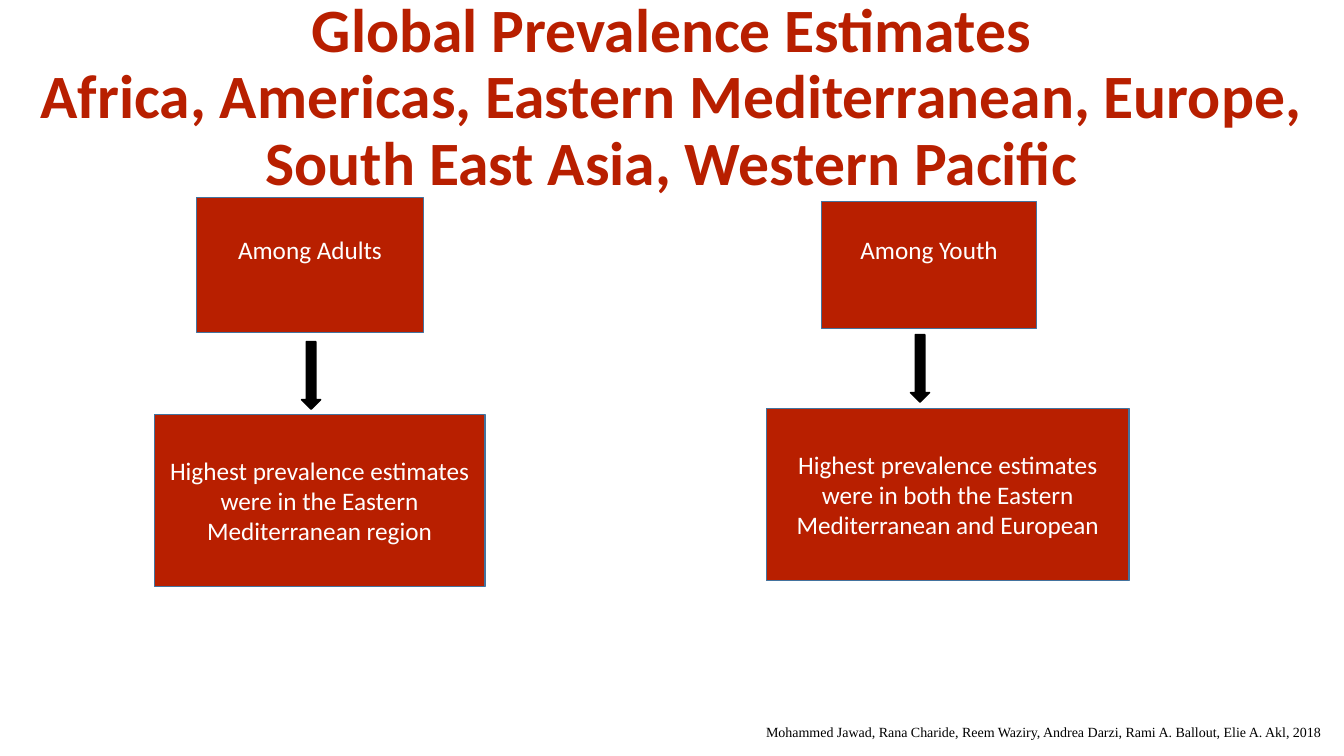
"""Build the slide on global prevalence estimates among adults and youth."""
from pptx import Presentation
from pptx.dml.color import RGBColor
from pptx.enum import shapes, text
from pptx.util import Inches, Pt

HUES = {"red": "B81F00", "edge": "43739E", "white": "FFFFFF", "black": "000000"}


def add_run(para, words, size, hue, font="Calibri", bold=False):
    run = para.add_run()
    run.text = words
    run.font.size = Pt(size)
    run.font.name = font
    run.font.bold = bold
    run.font.color.rgb = RGBColor.from_string(HUES[hue])


def add_block(kind, spot, fill, edge, words="", foot=0.05):
    block = slide.shapes.add_shape(kind, *map(Inches, spot))
    block.shadow.inherit = False
    block.fill.solid()
    block.fill.fore_color.rgb = RGBColor.from_string(HUES[fill])
    block.line.color.rgb = RGBColor.from_string(HUES[edge])
    block.line.width = Pt(1)
    if words:
        frame = block.text_frame
        frame.word_wrap = True
        frame.vertical_anchor = text.MSO_ANCHOR.MIDDLE
        frame.margin_bottom = Inches(foot)
        para = frame.paragraphs[0]
        para.alignment = text.PP_ALIGN.CENTER
        add_run(para, words, 18, "white")


deck = Presentation()
deck.slide_width = Inches(13.33)
deck.slide_height = Inches(7.5)
slide = deck.slides.add_slide(deck.slide_layouts[5])

title = slide.shapes.title
title.left, title.top = Inches(0), Inches(0)
title.width, title.height = Inches(13.33), Inches(1.96)
frame = title.text_frame
frame.word_wrap = True
frame.auto_size = text.MSO_AUTO_SIZE.NONE
frame.vertical_anchor = text.MSO_ANCHOR.MIDDLE
para = frame.paragraphs[0]
para.alignment = text.PP_ALIGN.CENTER
para.line_spacing = 0.9
add_run(para, "Global Prevalence Estimates", 44, "red", bold=True)
para.add_line_break()
add_run(para, "Africa, Americas, Eastern Mediterranean, Europe, "
        "South East Asia, Western Pacific", 44, "red", bold=True)

groups = [
    ("Among Adults", (1.95, 1.96, 2.25, 1.34), (2.99, 3.39),
     "Highest prevalence estimates were in the Eastern Mediterranean region",
     (1.53, 4.11, 3.28, 1.71)),
    ("Among Youth", (8.15, 2, 2.13, 1.26), (9.03, 3.32),
     "Highest prevalence estimates were in both the Eastern "
     "Mediterranean and European", (7.6, 4.05, 3.6, 1.71)),
]
box, arrow = shapes.MSO_SHAPE.RECTANGLE, shapes.MSO_SHAPE.DOWN_ARROW
for group, top, tip, finding, base in groups:
    add_block(box, top, "red", "edge", group, foot=0.35)
    add_block(box, base, "red", "edge", finding)
    add_block(arrow, (*tip, 0.19, 0.67), "black", "black")

credit = slide.shapes.add_textbox(Inches(7.5), Inches(7.13), Inches(5.83), Inches(0.27))
credit.text_frame.word_wrap = True
credit.text_frame.auto_size = text.MSO_AUTO_SIZE.SHAPE_TO_FIT_TEXT
add_run(credit.text_frame.paragraphs[0],
        "Mohammed Jawad, Rana Charide, Reem Waziry, Andrea Darzi, "
        "Rami A. Ballout, Elie A. Akl, 2018", 10, "black", "Times New Roman")

deck.save("out.pptx")
